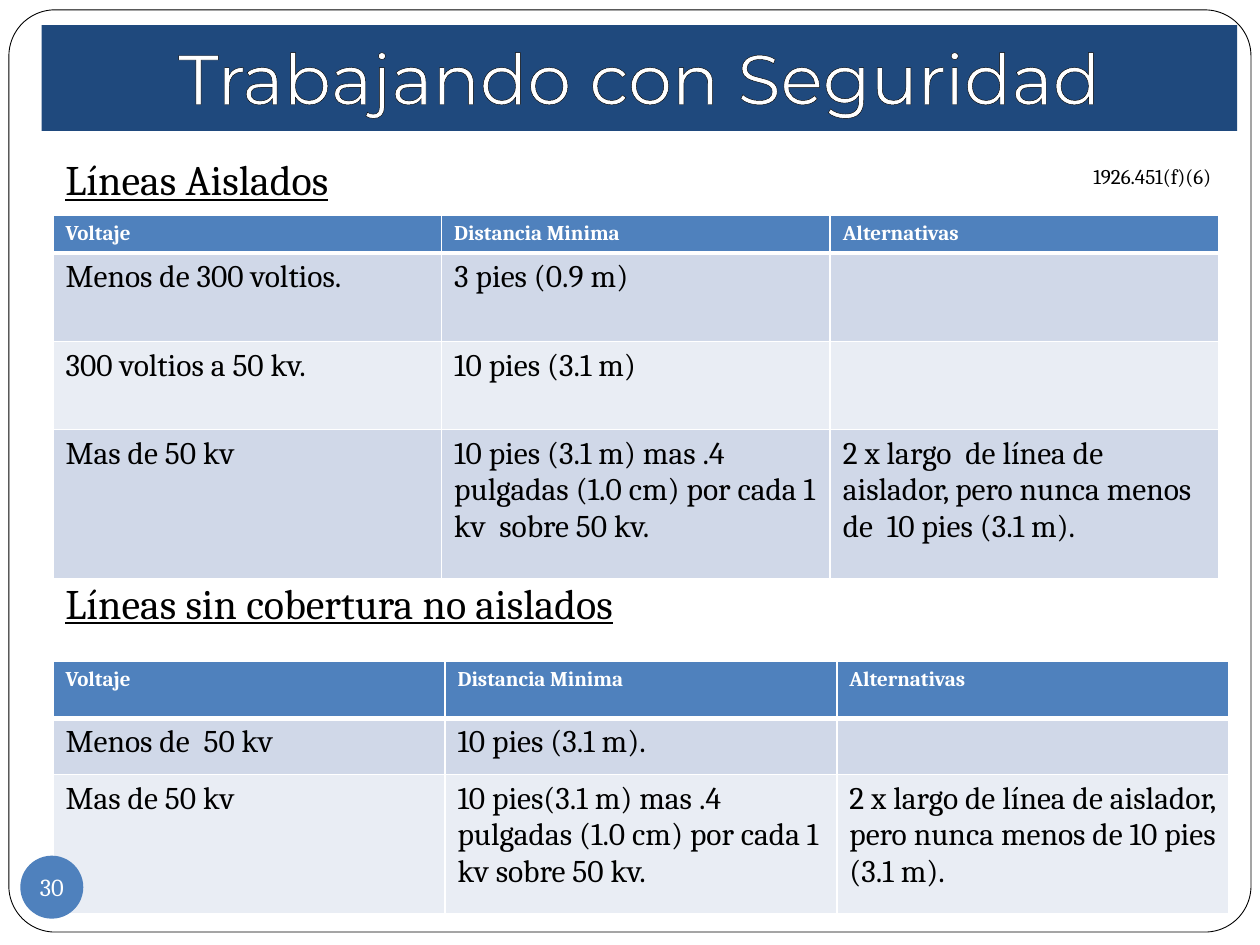
from dataclasses import dataclass

from lxml.etree import SubElement
from pptx import Presentation
from pptx.dml.color import RGBColor
from pptx.enum.shapes import MSO_SHAPE
from pptx.enum.text import MSO_ANCHOR, PP_ALIGN
from pptx.oxml import parse_xml
from pptx.oxml.ns import qn
from pptx.util import Cm, Pt


@dataclass(frozen=True)
class Theme:
    navy: str = "1F497D"
    blue: str = "4F81BD"
    bands: tuple[str, str] = ("D0D8E8", "E9EDF4")
    white: str = "FFFFFF"
    black: str = "000000"
    body_font: str = "Cambria"
    title_font: str = "Montserrat"
    title: int = 40
    heading: int = 24
    cell: int = 18
    number: int = 14
    small: int = 12


@dataclass(frozen=True)
class Box:
    left: float
    top: float
    width: float
    height: float

    def emu(self) -> tuple[Cm, Cm, Cm, Cm]:
        return Cm(self.left), Cm(self.top), Cm(self.width), Cm(self.height)


@dataclass(frozen=True)
class Heading:
    text: str
    box: Box


@dataclass(frozen=True)
class VoltageTable:
    left: float
    top: float
    width: float
    heights: tuple[float, ...]
    rows: tuple[tuple[str, str, str], ...]


THEME = Theme()
HEADER = ("Voltaje", "Distancia Minima", "Alternativas")
HEADINGS = (
    Heading("Líneas Aislados", Box(1.07, 2.97, 23.06, 1.2)),
    Heading("Líneas sin cobertura no aislados", Box(1.07, 11.51, 23.06, 1.2)),
)
INSULATED = VoltageTable(1.07, 4.34, 23.5, (0.74, 1.78, 1.78, 3), (
    HEADER,
    ("Menos de 300 voltios.", "3 pies (0.9 m)", ""),
    ("300 voltios a 50 kv.", "10 pies (3.1 m)", ""),
    ("Mas de 50 kv",
     "10 pies (3.1 m) mas .4 pulgadas (1.0 cm) por cada 1 kv  sobre 50 kv.",
     "2 x largo  de línea de aislador, pero nunca menos de  10 pies (3.1 m)."),
))
BARE = VoltageTable(1.07, 13.34, 23.7, (1.14, 1.14, 2.8), (
    HEADER,
    ("Menos de  50 kv", "10 pies (3.1 m).", ""),
    ("Mas de 50 kv",
     "10 pies(3.1 m) mas .4 pulgadas (1.0 cm) por cada 1 kv sobre 50 kv.",
     "2 x largo de línea de aislador, pero nunca menos de 10 pies (3.1 m)."),
))


def rgb(color: str) -> RGBColor:
    return RGBColor.from_string(color)


def write(tf, text: str, size: int, color: str, name: str = THEME.body_font,
          bold: bool = False, underline: bool = False, align=PP_ALIGN.LEFT):
    p = tf.paragraphs[0]
    p.alignment = align
    font = p.font
    font.size, font.name, font.bold = Pt(size), name, bold
    font.underline = underline
    font.color.rgb = rgb(color)
    r = p.add_run()
    r.text = text
    return r


def add_shape(s, kind, box: Box, fill: str):
    sp = s.shapes.add_shape(kind, *box.emu())
    sp.shadow.inherit = False
    sp.fill.solid()
    sp.fill.fore_color.rgb = rgb(fill)
    sp.line.fill.background()
    return sp


def add_text(s, text: str, box: Box, size: int, underline: bool = False) -> None:
    tf = s.shapes.add_textbox(*box.emu()).text_frame
    tf.word_wrap = True
    write(tf, text, size, THEME.black, underline=underline)


def add_frame(s) -> None:
    sp = add_shape(s, MSO_SHAPE.ROUNDED_RECTANGLE, Box(0.18, 0.2, 25.04, 18.59), THEME.white)
    sp.adjustments[0] = 0.05
    sp.line.color.rgb = rgb(THEME.black)
    sp.line.width = Pt(0.5)


def add_title(s, text: str) -> None:
    sp = add_shape(s, MSO_SHAPE.RECTANGLE, Box(0.84, 0.51, 24.1, 2.13), THEME.navy)
    tf = sp.text_frame
    tf.word_wrap = True
    tf.vertical_anchor = MSO_ANCHOR.BOTTOM
    tf.margin_bottom = Cm(0.25)
    r = write(tf, text, THEME.title, THEME.white, THEME.title_font, align=PP_ALIGN.CENTER)
    outline = parse_xml(
        '<a:ln xmlns:a="http://schemas.openxmlformats.org/drawingml/2006/main" '
        f'w="{Pt(0.75)}"><a:solidFill><a:srgbClr val="{THEME.black}"/></a:solidFill></a:ln>')
    r._r.get_or_add_rPr().insert(0, outline)


def add_borders(cell, top: int, bottom: int) -> None:
    tc_pr = cell._tc.get_or_add_tcPr()
    for side, width in {"L": 1, "R": 1, "T": top, "B": bottom}.items():
        ln = SubElement(tc_pr, qn(f"a:ln{side}"), w=str(Pt(width)))
        SubElement(SubElement(ln, qn("a:solidFill")), qn("a:srgbClr"), val=THEME.white)


def add_voltage_table(s, spec: VoltageTable) -> None:
    box = Box(spec.left, spec.top, spec.width, sum(spec.heights))
    table = s.shapes.add_table(len(spec.rows), len(HEADER), *box.emu()).table
    for col in table.columns:
        col.width = Cm(spec.width / len(HEADER))
    for i, (height, texts) in enumerate(zip(spec.heights, spec.rows)):
        table.rows[i].height = Cm(height)
        header = i == 0
        for j, text in enumerate(texts):
            cell = table.cell(i, j)
            add_borders(cell, top=3 if i == 1 else 1, bottom=3 if header else 1)
            cell.fill.solid()
            cell.fill.fore_color.rgb = rgb(THEME.blue if header else THEME.bands[(i - 1) % 2])
            if text:
                write(cell.text_frame, text, THEME.small if header else THEME.cell,
                      THEME.white if header else THEME.black, bold=header)


def add_page_number(s, number: str) -> None:
    sp = add_shape(s, MSO_SHAPE.OVAL, Box(0.41, 17.25, 1.27, 1.27), THEME.blue)
    tf = sp.text_frame
    tf.margin_left = tf.margin_right = tf.margin_top = tf.margin_bottom = 0
    tf.word_wrap = False
    tf.vertical_anchor = MSO_ANCHOR.MIDDLE
    write(tf, number, THEME.number, THEME.white, align=PP_ALIGN.CENTER)


def main() -> None:
    prs = Presentation()
    prs.slide_width, prs.slide_height = Cm(25.4), Cm(19.05)
    s = prs.slides.add_slide(prs.slide_layouts[6])
    add_frame(s)
    for heading in HEADINGS:
        add_text(s, heading.text, heading.box, THEME.heading, underline=True)
    add_voltage_table(s, BARE)
    add_title(s, "Trabajando con Seguridad")
    add_voltage_table(s, INSULATED)
    add_page_number(s, "30")
    add_text(s, "1926.451(f)(6)", Box(21.79, 3.18, 3.6, 0.76), THEME.small)
    prs.save("out.pptx")


if __name__ == "__main__":
    main()
